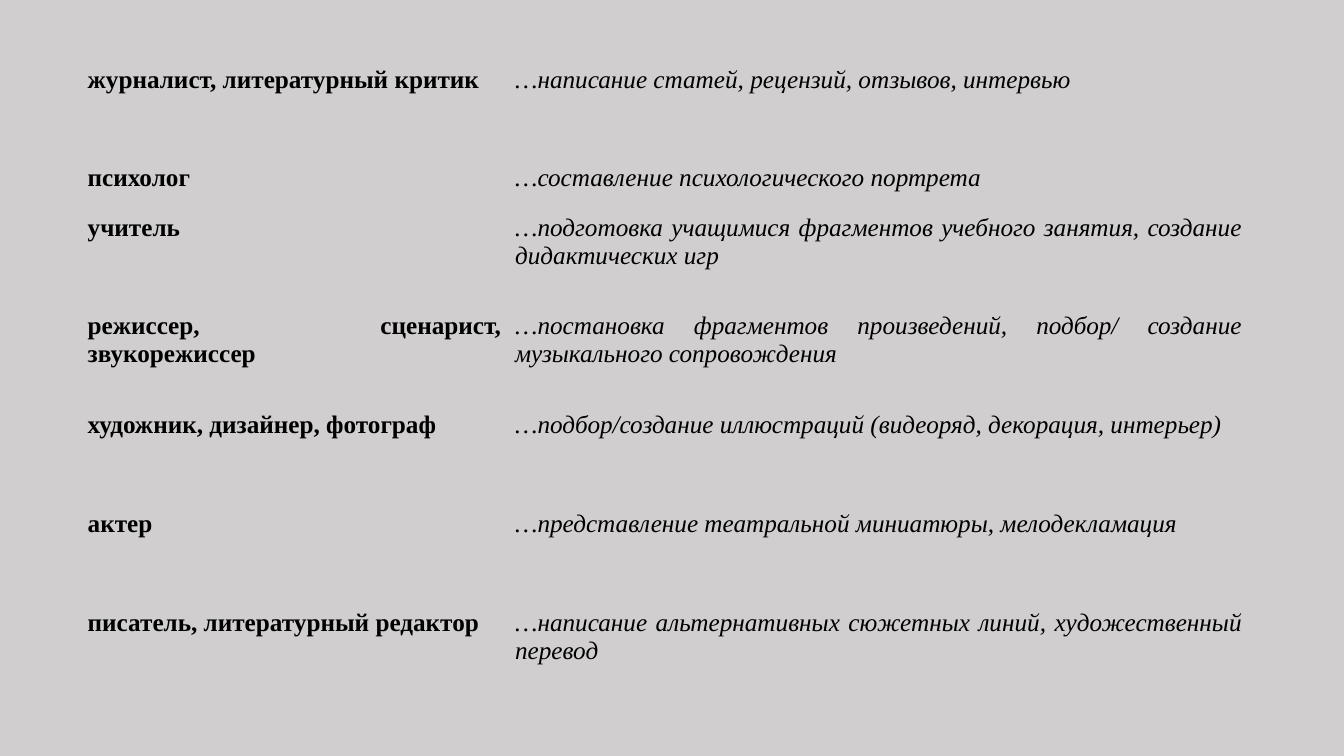
import pptx
import pptx.dml.color
import pptx.enum.text
import pptx.util
from pptx.util import Inches

BACKGROUND = pptx.dml.color.RGBColor(0xD0, 0xCE, 0xCE)
BLACK = pptx.dml.color.RGBColor(0, 0, 0)
FONT = "Times New Roman"
NO_GRID_STYLE = "{2D5ABB26-0587-4C30-8999-92F81FD0307C}"

COLUMN_WIDTHS = (4.24, 7.35)
TALL_ROW, SHORT_ROW = 0.98, 0.49

ROLES = [
    ("журналист, литературный критик", "…написание статей, рецензий, отзывов, интервью", TALL_ROW),
    ("психолог", "…составление психологического портрета", SHORT_ROW),
    ("учитель", "…подготовка учащимися фрагментов учебного занятия, создание дидактических игр", TALL_ROW),
    ("режиссер, сценарист, звукорежиссер",
     "…постановка фрагментов произведений, подбор/ создание музыкального сопровождения", TALL_ROW),
    ("художник, дизайнер, фотограф",
     "…подбор/создание иллюстраций (видеоряд, декорация, интерьер)", TALL_ROW),
    ("актер", "…представление театральной миниатюры, мелодекламация", TALL_ROW),
    ("писатель, литературный редактор",
     "…написание альтернативных сюжетных линий, художественный перевод", TALL_ROW),
]


def fill_cell(cell, text, bold=False, italic=False):
    cell.fill.background()
    cell.margin_left = cell.margin_right = Inches(0.07)
    cell.margin_top = cell.margin_bottom = 0
    p = cell.text_frame.paragraphs[0]
    p.text = text
    p.alignment = pptx.enum.text.PP_ALIGN.JUSTIFY
    p.font.name = FONT
    p.font.size = pptx.util.Pt(18)
    p.font.bold = bold
    p.font.italic = italic
    p.font.color.rgb = BLACK


def add_roles_table(s, left, top):
    height = sum(row_height for _, _, row_height in ROLES)
    frame = s.shapes.add_table(len(ROLES), len(COLUMN_WIDTHS), Inches(left), Inches(top),
                               Inches(sum(COLUMN_WIDTHS)), Inches(height))
    table = frame.table
    table.first_row = table.horz_banding = False
    table._tbl.tblPr.find(pptx.oxml.ns.qn("a:tableStyleId")).text = NO_GRID_STYLE
    for column, width in zip(table.columns, COLUMN_WIDTHS):
        column.width = Inches(width)
    for row, (role, task, row_height) in zip(table.rows, ROLES):
        row.height = Inches(row_height)
        fill_cell(row.cells[0], role, bold=True)
        fill_cell(row.cells[1], task, italic=True)


def main():
    prs = pptx.Presentation()
    prs.slide_width, prs.slide_height = Inches(13.33), Inches(7.5)
    s = prs.slides.add_slide(prs.slide_layouts[6])
    s.background.fill.solid()
    s.background.fill.fore_color.rgb = BACKGROUND
    add_roles_table(s, 0.8, 0.65)
    prs.save("out.pptx")


if __name__ == "__main__":
    main()
